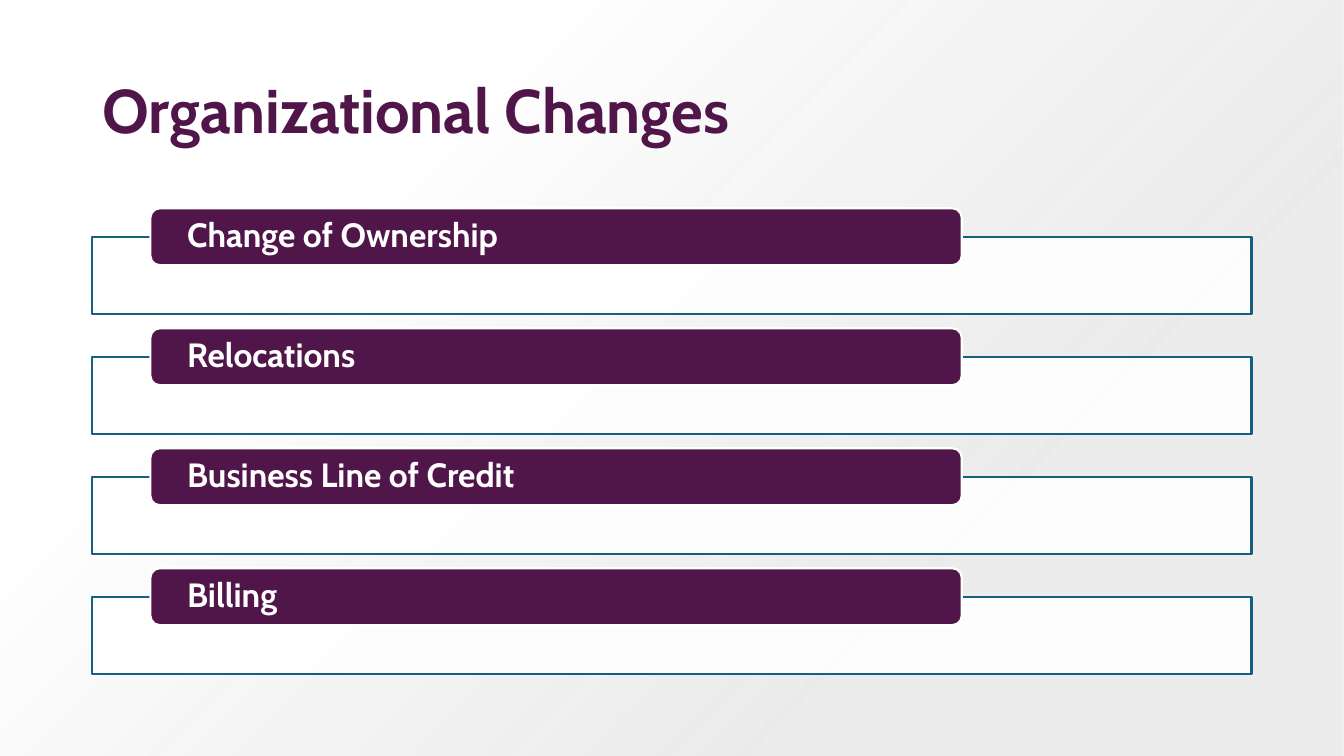
from lxml.etree import SubElement
from pptx import Presentation
from pptx.dml.color import RGBColor
from pptx.enum.shapes import MSO_SHAPE
from pptx.enum.text import MSO_ANCHOR, MSO_AUTO_SIZE, PP_ALIGN
from pptx.oxml import parse_xml
from pptx.oxml.ns import nsdecls, qn
from pptx.util import Pt

PLUM = RGBColor(0x50, 0x16, 0x49)
TEAL = RGBColor(0x15, 0x60, 0x82)
WHITE = RGBColor(0xFF, 0xFF, 0xFF)
WIDTH, HEIGHT = 960, 540
TOPICS = ["Change of Ownership", "Relocations", "Business Line of Credit", "Billing"]
GLOW = f"""<a:gradFill {nsdecls('a')} rotWithShape="1"><a:gsLst>
<a:gs pos="28000"><a:srgbClr val="E8E8E8"><a:alpha val="84000"/></a:srgbClr></a:gs>
<a:gs pos="74000"><a:srgbClr val="FFFFFF"/></a:gs></a:gsLst>
<a:path path="circle"><a:fillToRect l="100000" t="100000"/></a:path></a:gradFill>"""


def add_box(slide, kind, box, fill, line=None):
    shape = slide.shapes.add_shape(kind, *map(Pt, box))
    shape.shadow.inherit = False
    shape.fill.solid()
    shape.fill.fore_color.rgb = fill
    if line is None:
        shape.line.fill.background()
    else:
        shape.line.color.rgb = line
        shape.line.width = Pt(1.5)
    return shape


def set_text(shape, text, size, color, inset):
    frame = shape.text_frame
    frame.text = text
    look = {"word_wrap": True, "auto_size": MSO_AUTO_SIZE.NONE,
            "vertical_anchor": MSO_ANCHOR.MIDDLE,
            "margin_left": Pt(inset), "margin_right": Pt(inset)}
    for name, value in look.items():
        setattr(frame, name, value)
    para = frame.paragraphs[0]
    para.alignment = PP_ALIGN.LEFT
    para.line_spacing = 0.9
    font = {"name": "Cabin", "size": Pt(size), "bold": True}
    for name, value in font.items():
        setattr(para.font, name, value)
    para.font.color.rgb = color


def add_backdrop(slide, box):
    """Lay a radial glow behind everything else on the slide."""
    shape = add_box(slide, MSO_SHAPE.RECTANGLE, box, WHITE)
    props = shape.element.spPr
    props.replace(props.find(qn("a:solidFill")), parse_xml(GLOW))
    slide.shapes.element.insert(2, shape.element)


def add_title(slide, box):
    title = slide.shapes.title
    for name, value in zip(("left", "top", "width", "height"), box):
        setattr(title, name, Pt(value))
    set_text(title, "Organizational Changes", 44, PLUM, 7.2)


def add_topic(slide, box, text):
    """Draw a bar with a label that straddles its top edge."""
    left, top, width, height = box
    label = 0.54 * height
    bar = add_box(slide, MSO_SHAPE.RECTANGLE,
                  (left, top + label / 2, width, height - label / 2), WHITE, TEAL)
    color = bar.element.spPr.find(qn("a:solidFill"))[0]
    SubElement(color, qn("a:alpha"), val="90000")
    pill = add_box(slide, MSO_SHAPE.ROUNDED_RECTANGLE,
                   (left + 0.05 * width, top, 0.7 * width, label), PLUM, WHITE)
    set_text(pill, text, 24, WHITE, 24.3)


def add_list(slide, box, topics, gap):
    left, top, width, height = box
    pitch = (height + gap) / len(topics)
    for row, topic in enumerate(topics):
        add_topic(slide, (left, top + row * pitch, width, pitch - gap), topic)


def add_slide(deck):
    slide = deck.slides.add_slide(deck.slide_layouts[5])
    add_backdrop(slide, (0, 0, WIDTH, HEIGHT))
    add_title(slide, (66, 28.75, 828, 104.4))
    # The gap is negative: each label starts just above the foot of a full row
    add_list(slide, (66, 148.8, 828, 332.4), TOPICS, 10.4)


def main():
    deck = Presentation()
    deck.slide_width, deck.slide_height = Pt(WIDTH), Pt(HEIGHT)
    add_slide(deck)
    deck.save("out.pptx")


if __name__ == "__main__":
    main()
